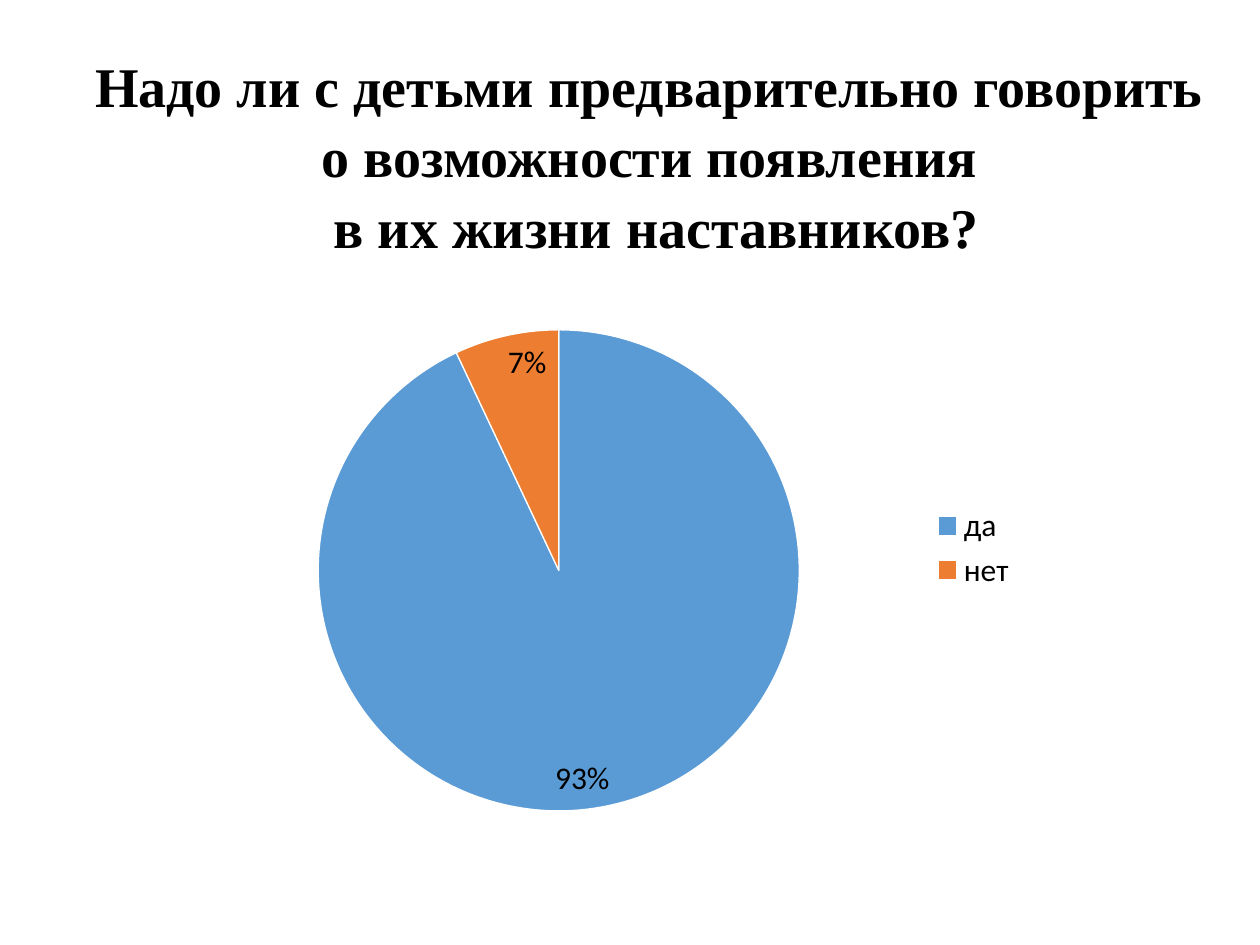
from lxml import etree
from pptx import Presentation
from pptx import util as u
from pptx.chart import data
from pptx.dml import color
from pptx.enum import chart as ch, text
from pptx.oxml import ns


def rgb(code):
    return color.RGBColor.from_string(code)


class Deck:
    """Hold the style and the current slide."""

    ink = "000000"
    head = "Times New Roman"
    body = "Calibri"
    tones = ("5B9BD5", "ED7D31")

    def __init__(self):
        self.prs = Presentation()
        self.prs.slide_width = u.Inches(10)
        self.prs.slide_height = u.Inches(7.5)
        self.slide = self.prs.slides.add_slide(self.prs.slide_layouts[5])

    def style(self, font, name, size):
        font.name = name
        font.size = u.Pt(size)
        font.color.rgb = rgb(self.ink)

    def title(self, lines, *box):
        shape = self.slide.shapes.title
        shape.left, shape.top, shape.width, shape.height = map(u.Inches, box)
        frame = shape.text_frame
        frame.word_wrap = False
        frame.auto_size = text.MSO_AUTO_SIZE.SHAPE_TO_FIT_TEXT
        for i, line in enumerate(lines):
            para = frame.add_paragraph() if i else frame.paragraphs[0]
            para.alignment = text.PP_ALIGN.CENTER
            para.line_spacing = 1.05
            run = para.add_run()
            run.text = line
            self.style(run.font, self.head, 32)
            run.font.bold = True

    def pie(self, cats, vals, frame, *box):
        info = data.CategoryChartData()
        info.categories = cats
        info.add_series("Series 1", vals)
        chart = self.slide.shapes.add_chart(
            ch.XL_CHART_TYPE.PIE, *map(u.Inches, box), info).chart
        self.style(chart.font, self.body, 18)
        chart.has_title = False
        chart.has_legend = True
        chart.legend.position = ch.XL_LEGEND_POSITION.RIGHT
        chart.legend.include_in_layout = False
        plot = chart.plots[0]
        plot.vary_by_categories = True
        for i, tone in enumerate(self.tones):
            look = plot.series[0].points[i].format
            look.fill.solid()
            look.fill.fore_color.rgb = rgb(tone)
            look.line.color.rgb = rgb("FFFFFF")
            look.line.width = u.Pt(0.75)
        plot.has_data_labels = True
        tags = plot.data_labels
        tags.show_percentage = True
        tags.show_value = False
        tags.number_format = "0%"
        tags.number_format_is_linked = False
        tags.position = ch.XL_LABEL_POSITION.INSIDE_END
        self.style(tags.font, self.body, 18)
        self.place(chart, frame)

    def place(self, chart, frame):
        area = chart.plots[0]._element.getparent()
        old = area.find(ns.qn("c:layout"))
        if old is not None:
            area.remove(old)
        layout = etree.Element(ns.qn("c:layout"))
        area.insert(0, layout)
        manual = etree.SubElement(layout, ns.qn("c:manualLayout"))
        parts = [("layoutTarget", "inner"), ("xMode", "edge"),
                 ("yMode", "edge"), *zip("xywh", frame)]
        for tag, val in parts:
            etree.SubElement(manual, ns.qn("c:" + tag), val=str(val))


def main():
    deck = Deck()
    deck.title(["Надо ли с детьми предварительно говорить ",
                "о возможности появления ",
                "в их жизни наставников?"], 0.61, 0.36, 9.2, 1.72)
    deck.pie(["да", "нет"], [93, 7], (0.15, 0.11, 0.58, 0.86),
             1.5, 2.13, 6.67, 4.44)
    deck.prs.save("out.pptx")


if __name__ == "__main__":
    main()
